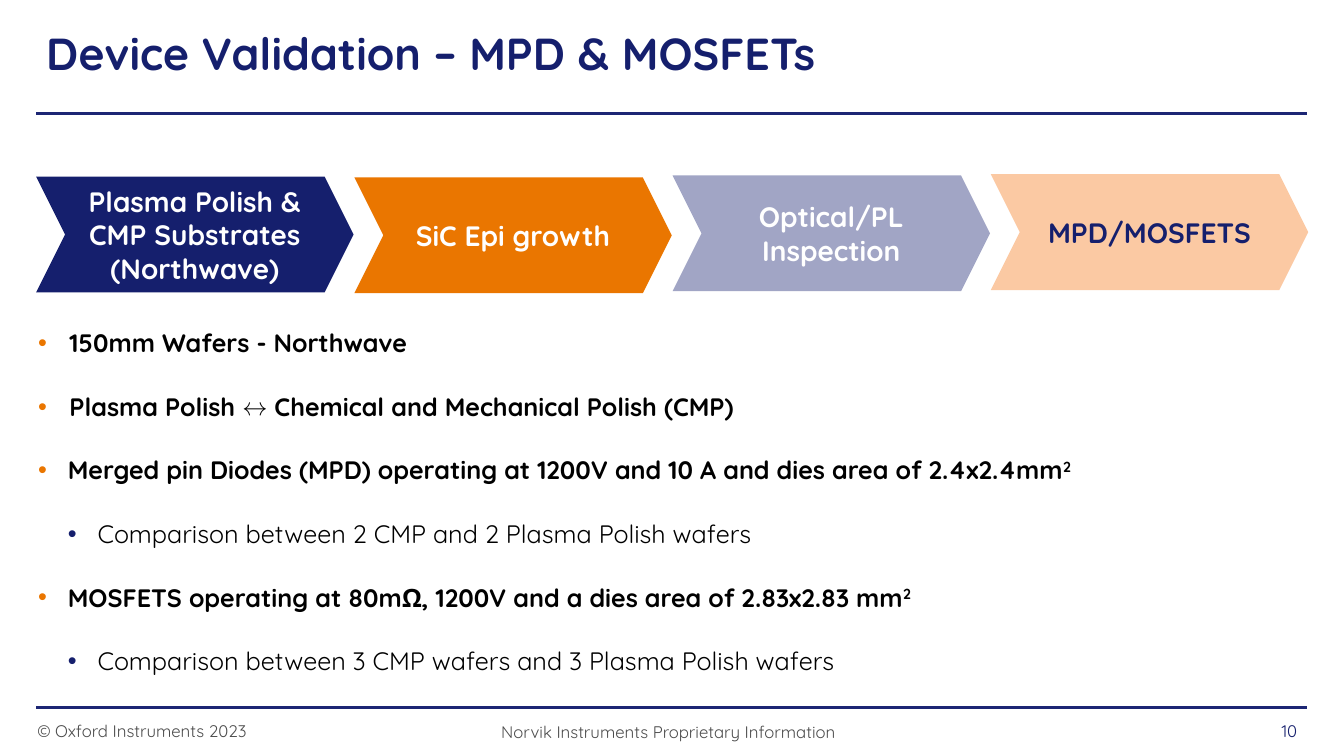
from lxml import etree
from pptx import Presentation
from pptx.dml.color import RGBColor
from pptx.enum.shapes import MSO_CONNECTOR, MSO_SHAPE
from pptx.enum.text import MSO_ANCHOR, MSO_AUTO_SIZE, PP_ALIGN
from pptx.oxml.ns import qn
from pptx.util import Cm, Pt

NAVY, ORANGE, GREY = "151F6D", "EA7600", "4C4C4C"


def rgb(value):
    return RGBColor.from_string(value)


def style(p, size, color, bold=False, align=PP_ALIGN.LEFT):
    p.alignment = align
    for r in p.runs:
        r.font.name = "Quicksand"
        r.font.size = Pt(size)
        r.font.bold = bold
        r.font.color.rgb = rgb(color)


prs = Presentation()
prs.slide_width, prs.slide_height = Cm(33.87), Cm(19.05)
s = prs.slides.add_slide(prs.slide_layouts[5])

# Title
title = s.shapes.title
title.left, title.top, title.width, title.height = Cm(0.91), Cm(0.36), Cm(26.62), Cm(2.08)
tf = title.text_frame
tf.text = "Device Validation – MPD & MOSFETs"
tf.auto_size = MSO_AUTO_SIZE.NONE
tf.vertical_anchor = MSO_ANCHOR.MIDDLE
tf.paragraphs[0].line_spacing = 0.9
style(tf.paragraphs[0], 32, NAVY, True)

# Rules under the title and above the footer
for y in (2.86, 17.83):
    rule = s.shapes.add_connector(MSO_CONNECTOR.STRAIGHT, Cm(0.91), Cm(y), Cm(32.94), Cm(y))
    rule.line.color.rgb = rgb("1C2674")
    rule.line.width = Pt(2)
    etree.SubElement(rule._element.spPr, qn("a:effectLst"))

# Footer: copyright, confidentiality, page number
footers = [
    ("© Oxford Instruments 2023", 0.69, 17.91, 7.87, 1.02, GREY, PP_ALIGN.LEFT),
    ("Norvik Instruments Proprietary Information", 0.69, 18.06, 32.31, 0.76, GREY, PP_ALIGN.CENTER),
    ("10", 28.32, 17.91, 4.62, 1.02, NAVY, PP_ALIGN.RIGHT),
]
for text, left, top, width, height, color, align in footers:
    tf = s.shapes.add_textbox(Cm(left), Cm(top), Cm(width), Cm(height)).text_frame
    tf.word_wrap = True
    tf.vertical_anchor = MSO_ANCHOR.MIDDLE
    tf.text = text
    style(tf.paragraphs[0], 12, color, align=align)

# Process chevrons
steps = [
    ("Plasma Polish &\vCMP Substrates (Northwave)", 4.45, NAVY, "FFFFFF"),
    ("SiC Epi growth", 4.47, ORANGE, "FFFFFF"),
    ("Optical/PL Inspection", 4.42, "A1A5C5", "FFFFFF"),
    ("MPD/MOSFETS", 4.39, "FBC9A3", NAVY),
]
for i, (text, top, fill, color) in enumerate(steps):
    sp = s.shapes.add_shape(MSO_SHAPE.CHEVRON, Cm(0.91 + 8.02 * i), Cm(top), Cm(8), Cm(2.92))
    sp.adjustments[0] = 0.25
    sp.shadow.inherit = False
    sp.fill.solid()
    sp.fill.fore_color.rgb = rgb(fill)
    sp.line.fill.background()
    tf = sp.text_frame
    tf.margin_left = tf.margin_right = tf.margin_top = tf.margin_bottom = 0
    tf.word_wrap = True
    tf.vertical_anchor = MSO_ANCHOR.MIDDLE
    tf.text = text
    style(tf.paragraphs[0], 20, color, True, PP_ALIGN.CENTER)

# Bullets: text, superscript, level, hanging indent
bullets = [
    ("150mm Wafers - Northwave", "", 0, 0.79),
    ("Plasma Polish ↔ Chemical and Mechanical Polish (CMP)", "", 0, 0.79),
    ("Merged pin Diodes (MPD) operating at 1200V and 10 A and dies area of 2.4x2.4mm", "2", 0, 0.75),
    ("Comparison between 2 CMP and 2 Plasma Polish wafers", "", 1, 0.75),
    ("MOSFETS operating at 80mΩ, 1200V and a dies area of 2.83x2.83 mm", "2", 0, 0.75),
    ("Comparison between 3 CMP wafers and 3 Plasma Polish wafers", "", 1, 0.75),
]
tf = s.shapes.add_textbox(Cm(0.71), Cm(7.75), Cm(30.63), Cm(9.8)).text_frame
tf.word_wrap = True
for i, (text, power, level, indent) in enumerate(bullets):
    p = tf.add_paragraph() if i else tf.paragraphs[0]
    p.text = text
    p.level = level
    p.line_spacing = 1.5
    p.space_before = Pt(10 if i else 0)
    p.space_after = Pt(3)
    pPr = p._p.get_or_add_pPr()
    pPr.set("marL", str(Cm(indent * (level + 1))))
    pPr.set("indent", str(-Cm(indent)))
    bullet_color = etree.SubElement(pPr, qn("a:buClr"))
    etree.SubElement(bullet_color, qn("a:srgbClr"), val=NAVY if level else ORANGE)
    etree.SubElement(pPr, qn("a:buFont"), typeface="Arial")
    etree.SubElement(pPr, qn("a:buChar"), char="•")
    if power:
        r = p.add_run()
        r.text = power
        r.font._element.set("baseline", "30000")
    style(p, 18, "000000", level == 0)

prs.save("out.pptx")
